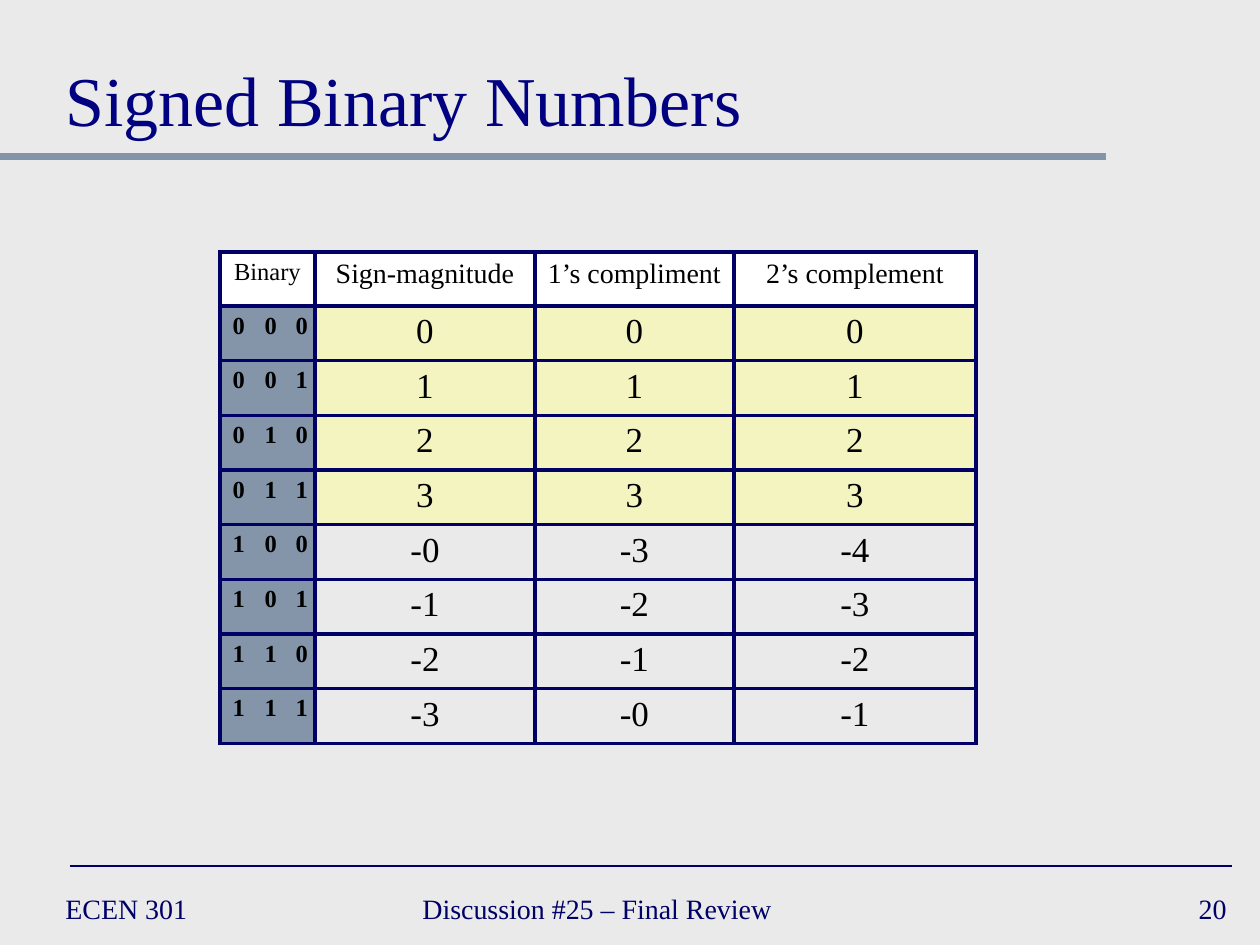
from dataclasses import dataclass
from typing import Optional

from lxml.etree import SubElement
from pptx import Presentation
from pptx.dml.color import RGBColor
from pptx.enum.shapes import MSO_CONNECTOR
from pptx.enum.text import MSO_ANCHOR, MSO_AUTO_SIZE, PP_ALIGN as Align
from pptx.oxml.ns import qn
from pptx.util import Emu, Pt

PX_PER_INCH = 126


@dataclass(frozen=True)
class Theme:
    font: str = "Times New Roman"
    page: str = "EAEAEA"
    title: str = "000080"
    navy: str = "000066"
    slate: str = "8495A9"
    yellow: str = "FFFF99"
    white: str = "FFFFFF"
    black: str = "000000"
    title_size: int = 40
    value_size: int = 20
    body_size: int = 16
    digit_size: int = 14
    border: float = 2.25


@dataclass(frozen=True)
class Rule:
    left: int
    right: int
    y: int
    color: str
    weight: float


@dataclass(frozen=True)
class Footer:
    text: str
    left: int
    width: int
    align: Align = Align.LEFT


THEME = Theme()
RULES = [
    Rule(0, 1106, 157, THEME.slate, 4),
    Rule(70, 1232, 866, THEME.navy, 1),
]
FOOTERS = [
    Footer("ECEN 301", 53, 273),
    Footer("Discussion #25 – Final Review", 410, 483),
    Footer("20", 977, 262, Align.RIGHT),
]
DIGITS = 3
COLUMN_WIDTHS = [32, 31, 32, 220, 199, 242]
HEADER_HEIGHT, ROW_HEIGHT = 54, 49
HEADERS = ["Binary", "Sign-magnitude", "1’s compliment", "2’s complement"]
VALUES = [
    ("0", "0", "0"),
    ("1", "1", "1"),
    ("2", "2", "2"),
    ("3", "3", "3"),
    ("-0", "-3", "-4"),
    ("-1", "-2", "-3"),
    ("-2", "-1", "-2"),
    ("-3", "-0", "-1"),
]


def px(length: int) -> Emu:
    return Emu(round(length * 914400 / PX_PER_INCH))


def rgb(color: str) -> RGBColor:
    return RGBColor.from_string(color)


def write(frame, text: str, *, size: int, color: str = THEME.black,
          bold: bool = False, align: Align = Align.LEFT) -> None:
    para = frame.paragraphs[0]
    para.alignment = align
    span = para.add_run()
    span.text = text
    span.font.name = THEME.font
    span.font.size = Pt(size)
    span.font.bold = bold
    span.font.color.rgb = rgb(color)


def draw_rule(page, rule: Rule) -> None:
    line = page.shapes.add_connector(
        MSO_CONNECTOR.STRAIGHT, px(rule.left), px(rule.y), px(rule.right), px(rule.y))
    line.line.color.rgb = rgb(rule.color)
    line.line.width = Pt(rule.weight)
    SubElement(line._element.spPr, qn("a:effectLst"))


def draw_footer(page, footer: Footer) -> None:
    box = page.shapes.add_textbox(px(footer.left), px(882), px(footer.width), px(53))
    box.text_frame.word_wrap = True
    box.text_frame.vertical_anchor = MSO_ANCHOR.MIDDLE
    write(box.text_frame, footer.text, size=THEME.body_size,
          color=THEME.navy, align=footer.align)


def set_borders(cell, hidden: set[str]) -> None:
    properties = cell._tc.get_or_add_tcPr()
    for side in "LRTB":
        line = SubElement(properties, qn(f"a:ln{side}"), w=str(Pt(THEME.border)))
        if side in hidden:
            SubElement(line, qn("a:noFill"))
        else:
            fill = SubElement(line, qn("a:solidFill"))
            SubElement(fill, qn("a:srgbClr"), val=THEME.navy)


def format_cell(cell, column: int, fill: Optional[str], opacity: int = 100) -> None:
    # The digits of one binary number share a single outline
    hidden = set()
    if 0 < column < DIGITS:
        hidden.add("L")
    if column < DIGITS - 1:
        hidden.add("R")
    set_borders(cell, hidden)
    if fill is None:
        cell.fill.background()
        return
    cell.fill.solid()
    cell.fill.fore_color.rgb = rgb(fill)
    if opacity < 100:
        color = cell._tc.tcPr.find(qn("a:solidFill")).find(qn("a:srgbClr"))
        SubElement(color, qn("a:alpha"), val=str(opacity * 1000))


def draw_table(page) -> None:
    frame = page.shapes.add_table(
        len(VALUES) + 1, len(COLUMN_WIDTHS), px(220), px(252),
        px(sum(COLUMN_WIDTHS)), px(HEADER_HEIGHT + ROW_HEIGHT * len(VALUES)))
    table = frame.table
    table.first_row = table.horz_banding = False
    for column, width in zip(table.columns, COLUMN_WIDTHS):
        column.width = px(width)
    for index, row in enumerate(table.rows):
        row.height = px(ROW_HEIGHT if index else HEADER_HEIGHT)

    # Header row, with the first heading across the digit columns
    for column in range(len(COLUMN_WIDTHS)):
        format_cell(table.cell(0, column), column, THEME.white)
    table.cell(0, 0).merge(table.cell(0, DIGITS - 1))
    for index, heading in enumerate(HEADERS):
        column = index + DIGITS - 1 if index else 0
        write(table.cell(0, column).text_frame, heading, align=Align.CENTER,
              size=THEME.body_size if index else THEME.digit_size)

    # Each code in binary, then its three readings
    for number, values in enumerate(VALUES):
        positive = number < len(VALUES) // 2
        for column, text in enumerate([*f"{number:0{DIGITS}b}", *values]):
            cell = table.cell(number + 1, column)
            is_digit = column < DIGITS
            if is_digit:
                format_cell(cell, column, THEME.slate)
            else:
                format_cell(cell, column, THEME.yellow if positive else None, 50)
            write(cell.text_frame, text, bold=is_digit, align=Align.CENTER,
                  size=THEME.digit_size if is_digit else THEME.value_size)


def main() -> None:
    deck = Presentation()
    deck.slide_width, deck.slide_height = px(1260), px(945)
    page = deck.slides.add_slide(deck.slide_layouts[5])
    page.background.fill.solid()
    page.background.fill.fore_color.rgb = rgb(THEME.page)

    # Rules and footer
    for rule in RULES:
        draw_rule(page, rule)
    for footer in FOOTERS:
        draw_footer(page, footer)

    # Title
    title = page.shapes.title
    title.left, title.top, title.width, title.height = px(53), px(21), px(1155), px(126)
    title.text_frame.auto_size = MSO_AUTO_SIZE.NONE
    title.text_frame.vertical_anchor = MSO_ANCHOR.BOTTOM
    write(title.text_frame, "Signed Binary Numbers",
          size=THEME.title_size, color=THEME.title)

    draw_table(page)
    deck.save("out.pptx")


if __name__ == "__main__":
    main()
